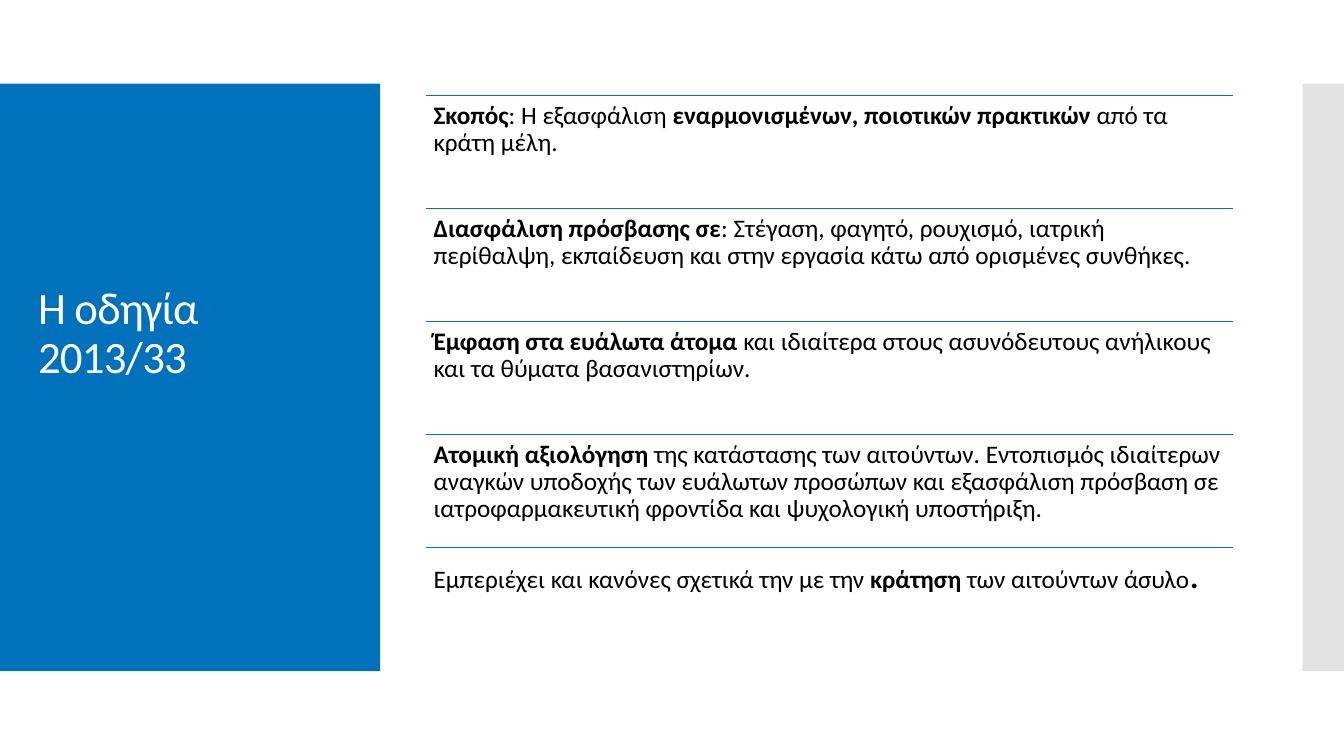
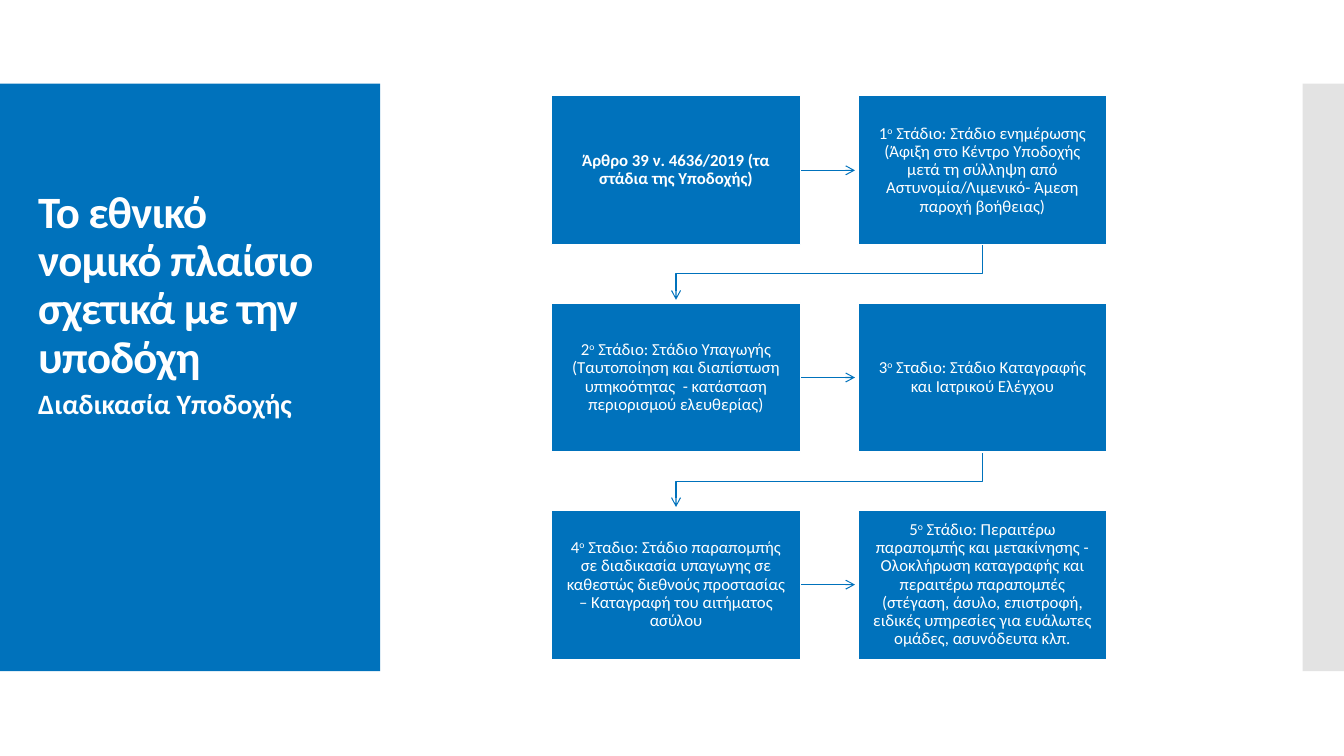
import dataclasses
import itertools
import typing

import lxml.etree
import pptx
import pptx.dml.color
import pptx.enum.shapes
import pptx.enum.text
import pptx.oxml.ns
import pptx.shapes.base
import pptx.slide
import pptx.text.text
import pptx.util

Inches = pptx.util.Inches
Pt = pptx.util.Pt
RGB = pptx.dml.color.RGBColor
RECTANGLE = pptx.enum.shapes.MSO_SHAPE.RECTANGLE
ANCHOR = pptx.enum.text.MSO_ANCHOR
ALIGN = pptx.enum.text.PP_ALIGN


@dataclasses.dataclass(frozen=True)
class Theme:
    blue: RGB = RGB(0x00, 0x72, 0xBC)
    grey: RGB = RGB(0xC8, 0xC8, 0xC8)
    white: RGB = RGB(0xFF, 0xFF, 0xFF)
    black: RGB = RGB(0x00, 0x00, 0x00)
    font: str = "Calibri"
    title_size: int = 32
    subtitle_size: int = 20
    point_size: int = 18
    full_stop_size: int = 28
    stage_size: int = 12
    rule_width: float = 0.85
    arrow_width: float = 0.75
    line_spacing: float = 0.9


THEME = Theme()


class Span(typing.NamedTuple):
    text: str
    bold: bool = False
    raised: bool = False
    size: int | None = None


class Area(typing.NamedTuple):
    """Left, top, width and height in inches."""
    left: float
    top: float
    width: float
    height: float

    def lengths(self) -> list[pptx.util.Length]:
        return [Inches(value) for value in self]


class Spot(typing.NamedTuple):
    x: float
    y: float


BLUE_BAND = Area(0, 0.83, 3.77, 5.83)
GREY_BAND = Area(12.92, 0.83, 0.42, 5.83)
TITLE = Area(0.28, 1.25, 3.1, 2.6)
SUBTITLE = Area(0.28, 3.82, 3.1, 2.54)

# Rows of the first slide
POINTS_AREA = Area(4.23, 0.95, 8, 5.6)
POINTS = [
    [Span("Σκοπός", bold=True), Span(": Η εξασφάλιση "),
     Span("εναρμονισμένων, ποιοτικών πρακτικών", bold=True),
     Span(" από τα κράτη μέλη.")],
    [Span("Διασφάλιση πρόσβασης σε", bold=True),
     Span(": Στέγαση, φαγητό, ρουχισμό, ιατρική περίθαλψη, εκπαίδευση "
          "και στην εργασία κάτω από ορισμένες συνθήκες.")],
    [Span("Έμφαση στα ευάλωτα άτομα ", bold=True),
     Span("και ιδιαίτερα στους ασυνόδευτους ανήλικους και τα θύματα "
          "βασανιστηρίων.")],
    [Span("Ατομική αξιολόγηση", bold=True),
     Span(" της κατάστασης των αιτούντων. Εντοπισμός ιδιαίτερων αναγκών "
          "υποδοχής των ευάλωτων προσώπων και εξασφάλιση πρόσβαση σε "
          "ιατροφαρμακευτική φροντίδα και ψυχολογική υποστήριξη.")],
    [Span("Εμπεριέχει και κανόνες σχετικά την με την "),
     Span("κράτηση", bold=True), Span(" των αιτούντων άσυλο"),
     Span(".", size=THEME.full_stop_size)],
]

# Boxes of the second slide
FLOW_AREA = Area(5.47, 0.95, 5.51, 5.59)
FLOW_COLUMNS, FLOW_ROWS = 2, 3
STAGE_WIDTH, STAGE_HEIGHT = 2.47, 1.48
ARROW_GAP = 0.03
FLOW_HEADING = [Span("Άρθρο 39 ν. 4636/2019 (τα στάδια της Υποδοχής)", bold=True)]
STAGES = [
    " Στάδιο: Στάδιο ενημέρωσης (Άφιξη στο Κέντρο Υποδοχής μετά τη σύλληψη "
    "από Αστυνομία/Λιμενικό- Άμεση παροχή βοήθειας)",
    " Στάδιο: Στάδιο Υπαγωγής (Ταυτοποίηση και διαπίστωση υπηκοότητας  - "
    "κατάσταση περιορισμού ελευθερίας)",
    " Σταδιο: Στάδιο Καταγραφής και Ιατρικού Ελέγχου",
    " Σταδιο: Στάδιο παραπομπής σε διαδικασία υπαγωγης σε καθεστώς διεθνούς "
    "προστασίας – Καταγραφή του αιτήματος ασύλου",
    " Στάδιο: Περαιτέρω παραπομπής και μετακίνησης - Ολοκλήρωση καταγραφής "
    "και περαιτέρω παραπομπές (στέγαση, άσυλο, επιστροφή, ειδικές υπηρεσίες "
    "για ευάλωτες ομάδες, ασυνόδευτα κλπ.",
]


def add_child(parent: lxml.etree._Element, tag: str, **attributes: str) -> None:
    child = lxml.etree.SubElement(parent, pptx.oxml.ns.qn(tag))
    for key, value in attributes.items():
        child.set(key, value)


def write(frame: pptx.text.text.TextFrame, spans: list[Span], size: int,
          color: RGB, inset: Spot = Spot(0.1, 0.05),
          anchor: ANCHOR = ANCHOR.TOP, align: ALIGN = ALIGN.LEFT,
          tracking: float = 0) -> None:
    """Fill a text frame with one paragraph of formatted spans."""
    frame.word_wrap = True
    frame.vertical_anchor = anchor
    frame.margin_left = frame.margin_right = Inches(inset.x)
    frame.margin_top = frame.margin_bottom = Inches(inset.y)
    paragraph = frame.paragraphs[0]
    paragraph.alignment = align
    paragraph.line_spacing = THEME.line_spacing
    for span in spans:
        run = paragraph.add_run()
        run.text = span.text
        run.font.name = THEME.font
        run.font.size = Pt(span.size or size)
        run.font.bold = span.bold
        run.font.color.rgb = color
        properties = run._r.get_or_add_rPr()
        if span.raised:
            properties.set("baseline", "30000")
        if tracking:
            properties.set("spc", str(round(tracking * 100)))


def add_text(slide: pptx.slide.Slide, area: Area, spans: list[Span], size: int,
             color: RGB, **layout: typing.Any) -> None:
    box = slide.shapes.add_textbox(*area.lengths())
    write(box.text_frame, spans, size, color, **layout)


def add_block(slide: pptx.slide.Slide, area: Area,
              color: RGB) -> pptx.shapes.base.BaseShape:
    block = slide.shapes.add_shape(RECTANGLE, *area.lengths())
    block.shadow.inherit = False
    block.fill.solid()
    block.fill.fore_color.rgb = color
    block.line.fill.background()
    return block


def add_line(slide: pptx.slide.Slide, start: Spot, end: Spot,
             width: float) -> pptx.shapes.base.BaseShape:
    line = slide.shapes.add_connector(
        pptx.enum.shapes.MSO_CONNECTOR.STRAIGHT,
        *(Inches(value) for value in (*start, *end)))
    line.line.color.rgb = THEME.blue
    line.line.width = Pt(width)
    add_child(line._element.spPr, "a:effectLst")
    return line


def add_bent_line(slide: pptx.slide.Slide, corners: list[Spot],
                  width: float) -> pptx.shapes.base.BaseShape:
    points = [(Inches(corner.x), Inches(corner.y)) for corner in corners]
    builder = slide.shapes.build_freeform(*points[0])
    builder.add_line_segments(points[1:], close=False)
    line = builder.convert_to_shape()
    line.shadow.inherit = False
    line.fill.background()
    line.line.color.rgb = THEME.blue
    line.line.width = Pt(width)
    return line


def add_flow_arrow(slide: pptx.slide.Slide, source: Area, target: Area) -> None:
    """Point straight to the next box in a row, or bend down to the next row."""
    if source.top == target.top:
        middle = source.top + source.height / 2
        arrow = add_line(slide, Spot(source.left + source.width, middle),
                         Spot(target.left - ARROW_GAP, middle), THEME.arrow_width)
    else:
        bottom = source.top + source.height
        bend = (bottom + target.top) / 2
        from_x = source.left + source.width / 2
        to_x = target.left + target.width / 2
        arrow = add_bent_line(
            slide, [Spot(from_x, bottom), Spot(from_x, bend), Spot(to_x, bend),
                    Spot(to_x, target.top - ARROW_GAP)], THEME.arrow_width)
    add_child(arrow.line._get_or_add_ln(), "a:tailEnd", type="arrow")


def add_titled_slide(deck: pptx.presentation.Presentation, title: str,
                     bold: bool = False) -> pptx.slide.Slide:
    """Start a slide with the shared bands and title."""
    slide = deck.slides.add_slide(deck.slide_layouts[6])
    add_block(slide, BLUE_BAND, THEME.blue)
    grey_band = add_block(slide, GREY_BAND, THEME.grey)
    grey = grey_band._element.spPr.find(".//" + pptx.oxml.ns.qn("a:srgbClr"))
    add_child(grey, "a:alpha", val="50000")
    add_text(slide, TITLE, [Span(title, bold=bold)], THEME.title_size,
             THEME.white, anchor=ANCHOR.BOTTOM, tracking=-0.6)
    return slide


def build_directive_slide(deck: pptx.presentation.Presentation) -> None:
    slide = add_titled_slide(deck, "Η οδηγία 2013/33")
    left, first_top, width, height = POINTS_AREA
    row_height = height / len(POINTS)
    for index, point in enumerate(POINTS):
        top = first_top + index * row_height
        add_line(slide, Spot(left, top), Spot(left + width, top), THEME.rule_width)
        add_text(slide, Area(left, top, width, row_height), point,
                 THEME.point_size, THEME.black, inset=Spot(0.07, 0.07))


def build_reception_slide(deck: pptx.presentation.Presentation) -> None:
    slide = add_titled_slide(
        deck, "Το εθνικό νομικό πλαίσιο σχετικά με την υποδόχη", bold=True)
    add_text(slide, SUBTITLE, [Span("Διαδικασία Υποδοχής", bold=True)],
             THEME.subtitle_size, THEME.white)

    # Grid of boxes, read row by row
    column_step = (FLOW_AREA.width - STAGE_WIDTH) / (FLOW_COLUMNS - 1)
    row_step = (FLOW_AREA.height - STAGE_HEIGHT) / (FLOW_ROWS - 1)
    places = [Area(FLOW_AREA.left + column * column_step,
                   FLOW_AREA.top + row * row_step, STAGE_WIDTH, STAGE_HEIGHT)
              for row in range(FLOW_ROWS) for column in range(FLOW_COLUMNS)]
    captions = [FLOW_HEADING] + [
        [Span(str(number)), Span("ο", raised=True), Span(stage)]
        for number, stage in enumerate(STAGES, start=1)]

    for source, target in itertools.pairwise(places):
        add_flow_arrow(slide, source, target)
    for place, caption in zip(places, captions):
        stage_box = add_block(slide, place, THEME.blue)
        stage_box.line.color.rgb = THEME.white
        stage_box.line.width = Pt(THEME.rule_width)
        write(stage_box.text_frame, caption, THEME.stage_size, THEME.white,
              inset=Spot(0.12, 0.13), anchor=ANCHOR.MIDDLE, align=ALIGN.CENTER)


def main() -> None:
    deck = pptx.Presentation()
    deck.slide_width, deck.slide_height = Inches(13.33), Inches(7.5)
    build_directive_slide(deck)
    build_reception_slide(deck)
    deck.save("out.pptx")


if __name__ == "__main__":
    main()
